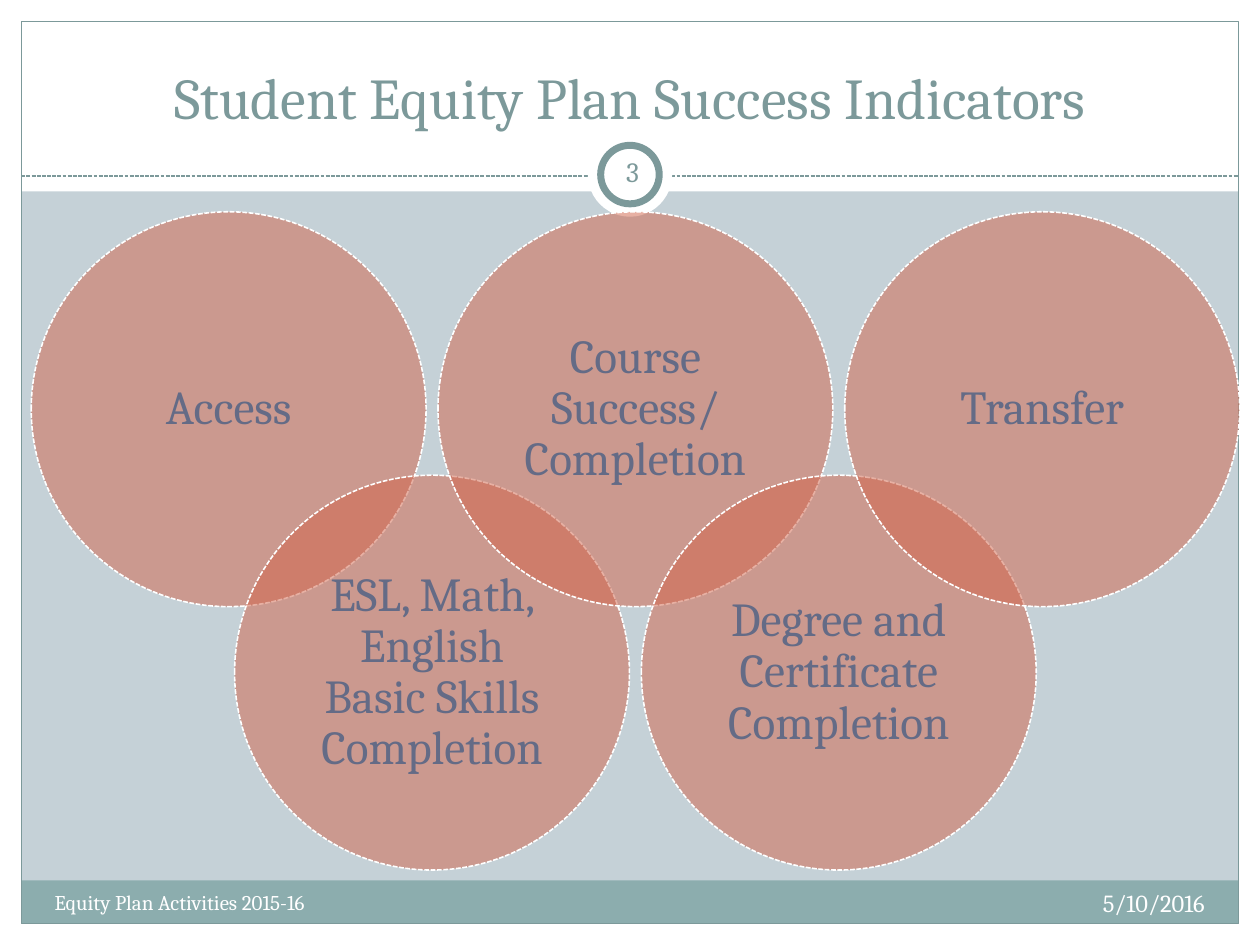
from lxml import etree
from pptx import Presentation
from pptx import util as u
from pptx.dml.color import RGBColor
from pptx.enum import dml, shapes, text
from pptx.oxml.ns import qn

COLORS = {
    "background": "C5D1D7",
    "white": "FFFFFF",
    "footer": "8CADAE",
    "accent": "7C999A",
    "circle": "D16349",
    "label": "646B86",
}
FONT = "Cambria"
WIDTH, HEIGHT, MARGIN = 25.4, 19.05, 0.43
DIAMETER, CIRCLE_STEP, CIRCLE_LEFT = 7.96, 4.1, 0.63
ROW_TOPS = (4.27, 9.58)
INDICATORS = (
    "Access",
    "ESL, Math, English Basic Skills Completion",
    "Course Success/ Completion",
    "Degree and Certificate Completion",
    "Transfer",
)


def color(name):
    return RGBColor.from_string(COLORS[name])


def write(shape, content, size, color_name, align=text.PP_ALIGN.CENTER,
          anchor=text.MSO_ANCHOR.MIDDLE, inset=None, spacing=None):
    frame = shape.text_frame
    frame.word_wrap = True
    frame.auto_size = text.MSO_AUTO_SIZE.NONE
    frame.vertical_anchor = anchor
    if inset is not None:
        frame.margin_left = frame.margin_right = u.Cm(inset)
        frame.margin_top = frame.margin_bottom = u.Cm(inset)
    paragraph = frame.paragraphs[0]
    paragraph.alignment = align
    if spacing:
        paragraph.line_spacing = spacing
    run = paragraph.add_run()
    run.text = content
    run.font.name = FONT
    run.font.size = u.Pt(size)
    run.font.color.rgb = color(color_name)


def set_line(line, color_name, width, dashed=False):
    line.color.rgb = color(color_name)
    line.width = u.Pt(width)
    if dashed:
        line.dash_style = dml.MSO_LINE.SQUARE_DOT


def add_shape(slide, kind, box, fill=None, line=None, opacity=None):
    shape = slide.shapes.add_shape(kind, *map(u.Cm, box))
    shape.shadow.inherit = False
    if fill:
        shape.fill.solid()
        shape.fill.fore_color.rgb = color(fill)
    else:
        shape.fill.background()
    if opacity:
        value = next(shape.element.spPr.iter(qn("a:srgbClr")))
        etree.SubElement(value, qn("a:alpha"), val=str(opacity * 1000))
    if line:
        set_line(shape.line, *line)
    else:
        shape.line.fill.background()
    return shape


def add_text(slide, box, content, **style):
    write(slide.shapes.add_textbox(*map(u.Cm, box)), content, **style)


def add_frame(slide):
    rectangle = shapes.MSO_SHAPE.RECTANGLE
    inner_width = WIDTH - 2 * MARGIN
    bands = (
        (0, HEIGHT - MARGIN, WIDTH, MARGIN),
        (0, 0, WIDTH, 3.86),
        (0, 0, MARGIN, HEIGHT),
        (WIDTH - MARGIN, 0, MARGIN, HEIGHT),
    )
    for band in bands:
        add_shape(slide, rectangle, band, fill="white")
    add_shape(slide, rectangle, (MARGIN, 17.75, inner_width, 0.87), fill="footer")
    add_shape(slide, rectangle, (MARGIN, MARGIN, inner_width, HEIGHT - 2 * MARGIN),
              line=("accent", 0.75))
    divider = slide.shapes.add_connector(
        shapes.MSO_CONNECTOR.STRAIGHT,
        u.Cm(MARGIN), u.Cm(3.55), u.Cm(WIDTH - MARGIN), u.Cm(3.55))
    set_line(divider.line, "accent", 0.75, dashed=True)
    etree.SubElement(divider.element.spPr, qn("a:effectLst"))


def add_badge(slide):
    oval = shapes.MSO_SHAPE.OVAL
    add_shape(slide, oval, (11.85, 2.67, 1.7, 1.7), fill="white")
    add_shape(slide, oval, (12.11, 2.93, 1.18, 1.18), fill="white", line=("accent", 4))


def add_title(slide, content):
    title = slide.shapes.title
    title.element.getparent().append(title.element)
    title.left, title.top, title.width, title.height = map(
        u.Cm, (0.85, 0.64, 23.7, 2.12))
    write(title, content, size=33, color_name="accent", anchor=text.MSO_ANCHOR.BOTTOM)


def add_indicators(slide):
    for index, label in enumerate(INDICATORS):
        box = (CIRCLE_LEFT + index * CIRCLE_STEP, ROW_TOPS[index % 2], DIAMETER, DIAMETER)
        circle = add_shape(slide, shapes.MSO_SHAPE.OVAL, box, fill="circle",
                           line=("white", 0.9, True), opacity=50)
        write(circle, label, size=27, color_name="label", inset=0.27, spacing=0.9)


def add_footer(slide):
    top = text.MSO_ANCHOR.TOP
    add_text(slide, (12.12, 2.84, 1.27, 1.22), "3", size=16, color_name="accent",
             inset=0.13)
    add_text(slide, (16.08, 17.78, 8.46, 1.02), "5/10/2016", size=14,
             color_name="white", align=text.PP_ALIGN.RIGHT, anchor=top)
    add_text(slide, (0.85, 17.81, 9.95, 1.02), "Equity Plan Activities 2015-16",
             size=12, color_name="white", align=text.PP_ALIGN.LEFT, anchor=top)


def main():
    presentation = Presentation()
    presentation.slide_width = u.Cm(WIDTH)
    presentation.slide_height = u.Cm(HEIGHT)
    slide = presentation.slides.add_slide(presentation.slide_layouts[5])
    slide.background.fill.solid()
    slide.background.fill.fore_color.rgb = color("background")
    add_frame(slide)
    add_badge(slide)
    add_title(slide, "Student Equity Plan Success Indicators")
    add_indicators(slide)
    add_footer(slide)
    presentation.save("out.pptx")


if __name__ == "__main__":
    main()
